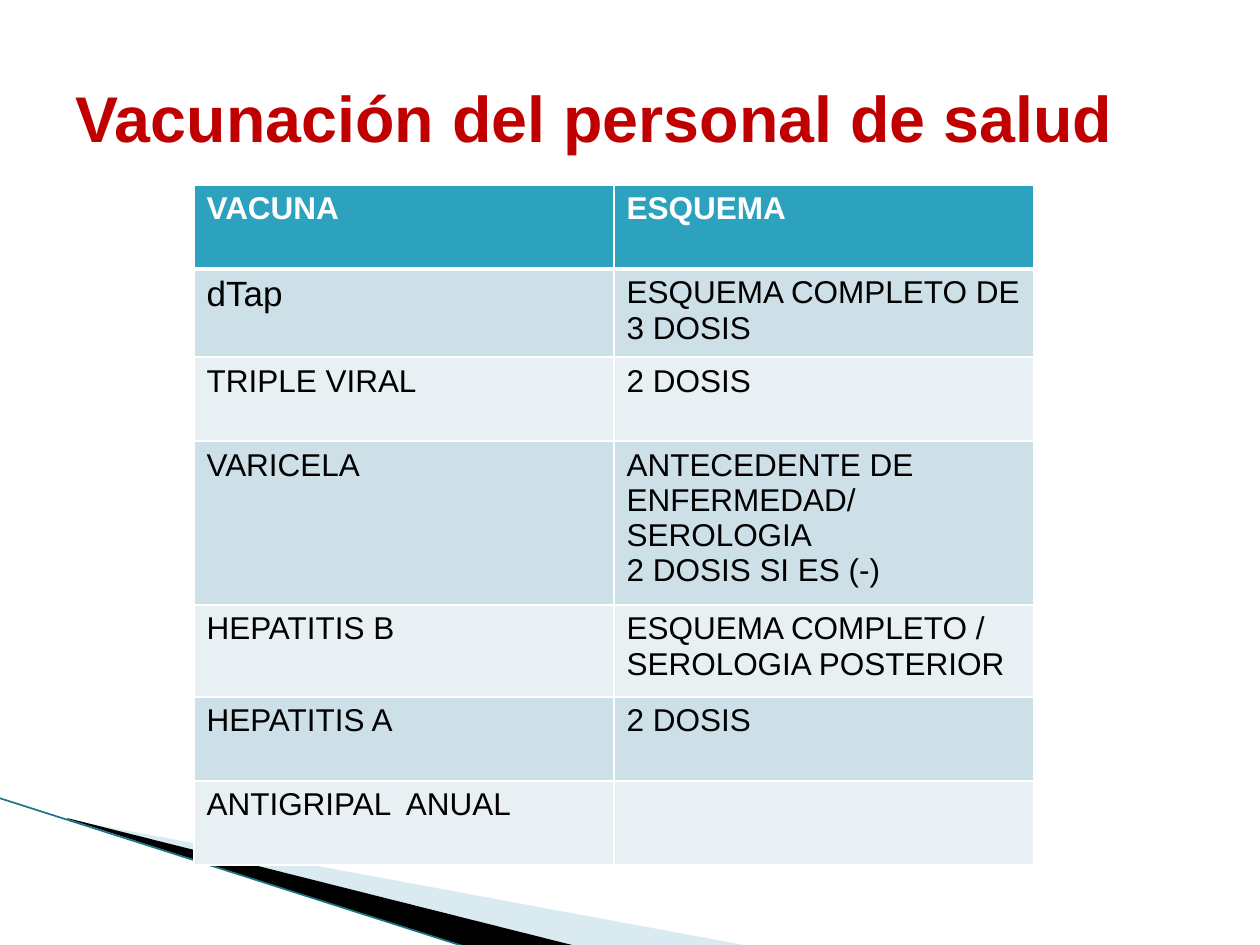
from dataclasses import dataclass

from lxml import etree
from pptx import Presentation
from pptx import util as u
from pptx.dml.color import RGBColor
from pptx.enum import shapes, text
from pptx.oxml import parse_xml
from pptx.oxml.ns import nsdecls, qn

SCALE = 914400 / 126


@dataclass(frozen=True)
class Theme:
    """Colours, font and type sizes of the slide."""
    font: str = "Arial"
    title: str = "C00000"
    header: str = "2DA2BF"
    bands: tuple = ("CDE0E8", "E8F0F4")
    ink: str = "000000"
    white: str = "FFFFFF"
    wedge: str = "A0CBDC"
    edge: str = "1B7587"
    title_size: float = 36.9
    lead_size: int = 20
    cell_size: int = 18


THEME = Theme()
HEADINGS = ("VACUNA", "ESQUEMA")
SCHEDULE = (
    ("dTap", "ESQUEMA COMPLETO DE 3 DOSIS"),
    ("TRIPLE VIRAL", "2 DOSIS"),
    ("VARICELA", "ANTECEDENTE DE ENFERMEDAD/ SEROLOGIA\n2 DOSIS SI ES (-)"),
    ("HEPATITIS B", "ESQUEMA COMPLETO / SEROLOGIA POSTERIOR"),
    ("HEPATITIS A", "2 DOSIS"),
    ("ANTIGRIPAL  ANUAL", ""),
)
ROW_HEIGHTS = (84, 84, 84, 121, 92, 84, 84)


def px(length):
    """Turn pixels into EMU."""
    return u.Emu(round(length * SCALE))


def write(frame, words, *, size=THEME.cell_size, color=THEME.ink, bold=False):
    """Fill a text frame, one paragraph for each line of words."""
    frame.word_wrap = True
    for index, line in enumerate(words.split("\n")):
        para = frame.add_paragraph() if index else frame.paragraphs[0]
        para.alignment = text.PP_ALIGN.LEFT
        para.font.size = u.Pt(size)
        if line:
            span = para.add_run()
            span.text = line
            span.font.name = THEME.font
            span.font.size = u.Pt(size)
            span.font.bold = bold
            span.font.color.rgb = RGBColor.from_string(color)


def add_wedge(page, left, top, points, color, opacity=100):
    """Draw a filled outline from points relative to its corner."""
    corners = [(left + x, top + y) for x, y in points]
    builder = page.shapes.build_freeform(*corners[0], scale=SCALE)
    builder.add_line_segments(corners[1:], close=True)
    wedge = builder.convert_to_shape()
    wedge.shadow.inherit = False
    wedge.line.fill.background()
    wedge.fill.solid()
    wedge.fill.fore_color.rgb = RGBColor.from_string(color)
    if opacity < 100:
        tint = wedge.fill._xPr.find(qn("a:solidFill"))[0]
        etree.SubElement(tint, qn("a:alpha"), val=str(opacity * 1000))


def add_corner(page, left, top):
    """Draw the wedges and edge line of the lower left corner."""
    add_wedge(page, left + 70, top + 21,
              ((0, 1), (680, 127), (505, 127), (0, 0)), THEME.wedge, 40)
    add_wedge(page, left + 68, top + 20,
              ((0, 0), (509, 128), (402, 130), (1, 1)), THEME.ink)
    edge = page.shapes.add_connector(
        shapes.MSO_CONNECTOR.STRAIGHT, px(left), px(top), px(left + 470), px(top + 150))
    edge.line.color.rgb = RGBColor.from_string(THEME.edge)
    edge.line.width = u.Pt(0.95)
    etree.SubElement(edge._element.spPr, qn("a:effectLst"))


def add_title(page, left, top, width, height):
    """Place the slide title."""
    box = page.shapes.add_textbox(px(left), px(top), px(width), px(height))
    box.text_frame.vertical_anchor = text.MSO_ANCHOR.MIDDLE
    write(box.text_frame, "Vacunación del personal de salud",
          size=THEME.title_size, color=THEME.title, bold=True)


def style_cell(cell, fill, top=1, bottom=1):
    """Set the fill and white borders of a table cell."""
    cell.fill.solid()
    cell.fill.fore_color.rgb = RGBColor.from_string(fill)
    sides = (("L", 1), ("R", 1), ("T", top), ("B", bottom))
    for index, (side, weight) in enumerate(sides):
        border = parse_xml(
            f'<a:ln{side} {nsdecls("a")} w="{u.Pt(weight)}"><a:solidFill>'
            f'<a:srgbClr val="{THEME.white}"/></a:solidFill></a:ln{side}>')
        cell._tc.get_or_add_tcPr().insert(index, border)


def add_schedule(page, left, top, width):
    """Place the table of vaccines and doses."""
    rows = (HEADINGS, *SCHEDULE)
    frame = page.shapes.add_table(len(rows), len(HEADINGS), px(left), px(top),
                                  px(width), px(sum(ROW_HEIGHTS)))
    table = frame.table
    for column in table.columns:
        column.width = px(width / len(HEADINGS))
    for index, (row, height) in enumerate(zip(rows, ROW_HEIGHTS)):
        table.rows[index].height = px(height)
        heading = index == 0
        fill = THEME.header if heading else THEME.bands[(index - 1) % 2]
        for column, words in enumerate(row):
            cell = table.cell(index, column)
            style_cell(cell, fill, top=3 if index == 1 else 1,
                       bottom=3 if heading else 1)
            write(cell.text_frame, words, bold=heading,
                  size=THEME.lead_size if words == "dTap" else THEME.cell_size,
                  color=THEME.white if heading else THEME.ink)


def main():
    """Build and save the deck."""
    deck = Presentation()
    deck.slide_width, deck.slide_height = px(1260), px(945)
    page = deck.slides.add_slide(deck.slide_layouts[6])
    add_corner(page, -1, 798)
    add_title(page, 63, 38, 1134, 157)
    add_schedule(page, 194, 185, 840)
    deck.save("out.pptx")


if __name__ == "__main__":
    main()
